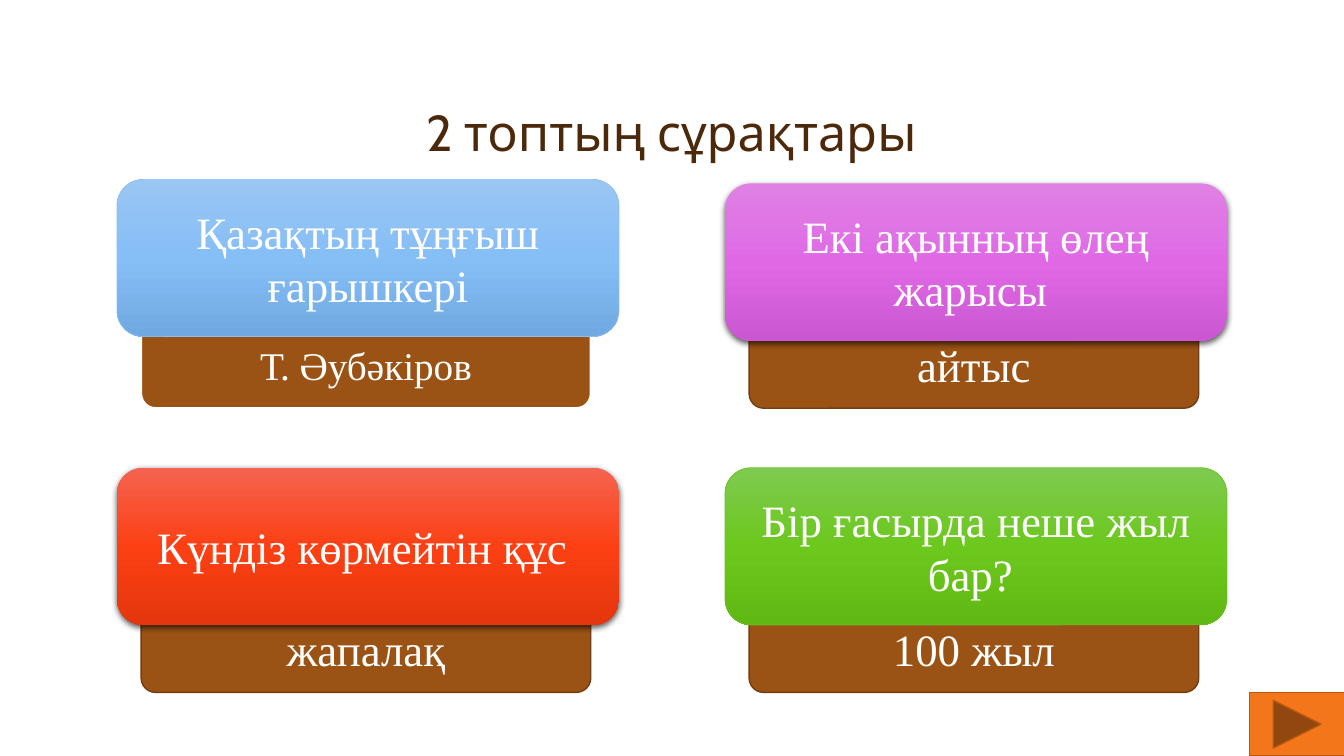
import copy

import pptx
import pptx.dml.color
import pptx.enum.shapes
import pptx.enum.text
import pptx.oxml
import pptx.oxml.ns
import pptx.util

PX = 9144  # EMU per px, 100 px to the inch
SHAPES = pptx.enum.shapes.MSO_SHAPE
ANCHORS = pptx.enum.text.MSO_ANCHOR
COLORS = {
    "title": "4D290B",
    "text": "FFFFFF",
    "answer": "9A5315",
    "answer_line": "723D10",
    "button": "F3771A",
    "button_line": "B45813",
    "blue_line": "8BBEF1",
    "green_line": "6DC025",
}
GRADIENTS = {
    "blue": ("9AC6F4", "86BEF6", "70A9E1"),
    "pink": ("DF81E4", "DF69E5", "CC57D2"),
    "red": ("F56350", "FC4014", "E5360D"),
    "green": ("7ECA50", "6CC81D", "60B813"),
}
# question, its left, top, gradient, line; answer, its size, line, line width
CARDS = [
    ("Қазақтың тұңғыш ғарышкері", 116, 178, "blue", "blue_line",
     "Т. Әубәкіров", 28, "text", 1.5),
    ("Екі ақынның өлең жарысы ", 719, 182, "pink", None,
     "айтыс", 32, "answer_line", 1),
    ("Күндіз көрмейтін құс ", 116, 464, "red", None,
     "жапалақ", 32, "answer_line", 1),
    ("Бір ғасырда неше жыл бар? ", 719, 464, "green", "green_line",
     "100 жыл", 32, "answer_line", 1),
]
ANSWER_TOPS = {178: 319, 182: 319, 464: 601}


def rgb(value):
    return pptx.dml.color.RGBColor.from_string(value)


def add_box(page, kind, left, top, width, height):
    box = page.shapes.add_shape(kind, left * PX, top * PX, width * PX, height * PX)
    box.shadow.inherit = False
    return box


def set_line(box, color, width):
    if color is None:
        box.line.fill.background()
        return
    box.line.color.rgb = rgb(COLORS[color])
    box.line.width = pptx.util.Pt(width)


def fill_solid(box, color):
    box.fill.solid()
    box.fill.fore_color.rgb = rgb(COLORS[color])


def fill_gradient(box, colors):
    """Fill from top to bottom with evenly spaced colours."""
    box.fill.gradient()
    box.fill.gradient_angle = 270
    stop_list = box.element.spPr.find(".//" + pptx.oxml.ns.qn("a:gsLst"))
    stop_list.append(copy.deepcopy(stop_list[-1]))
    for index, (stop, color) in enumerate(zip(box.fill.gradient_stops, colors)):
        stop.position = index / (len(colors) - 1)
        stop.color.rgb = rgb(color)


def add_shadow(box):
    effects = box.element.spPr.find(pptx.oxml.ns.qn("a:effectLst"))
    effects.append(pptx.oxml.parse_xml(
        f'<a:outerShdw {pptx.oxml.ns.nsdecls("a")} blurRad="57150" dist="19050" '
        'dir="5400000" algn="ctr" rotWithShape="0"><a:srgbClr val="000000">'
        '<a:alpha val="63000"/></a:srgbClr></a:outerShdw>'))


def write(box, text, size, font, color, anchor):
    frame = box.text_frame
    frame.word_wrap = True
    frame.vertical_anchor = anchor
    para = frame.paragraphs[0]
    para.text = text
    para.alignment = pptx.enum.text.PP_ALIGN.CENTER
    para.font.size = pptx.util.Pt(size)
    para.font.name = font
    para.font.color.rgb = rgb(COLORS[color])
    return para


def add_title(page, text):
    title = page.shapes.title
    title.left, title.top, title.width, title.height = (
        116 * PX, 33 * PX, 1100 * PX, 133 * PX)
    para = write(title, text, 36, "Cabin", "title", ANCHORS.BOTTOM)
    para.line_spacing = 0.9


def add_answer(page, text, left, top, size, line, line_width):
    box = add_box(page, SHAPES.ROUNDED_RECTANGLE, left, top, 446, 86)
    fill_solid(box, "answer")
    set_line(box, line, line_width)
    write(box, text, size, "Times New Roman", "text", ANCHORS.MIDDLE)


def add_question(page, text, left, top, gradient, line):
    box = add_box(page, SHAPES.ROUNDED_RECTANGLE, left, top, 498, 156)
    fill_gradient(box, GRADIENTS[gradient])
    set_line(box, line, 0.5)
    if line is None:
        add_shadow(box)
    write(box, text, 32, "Times New Roman", "text", ANCHORS.MIDDLE)


def add_next_button(page):
    button = add_box(page, SHAPES.ACTION_BUTTON_FORWARD_OR_NEXT, 1239, 687, 95, 63)
    fill_solid(button, "button")
    set_line(button, "button_line", 1)


def main():
    deck = pptx.Presentation()
    deck.slide_width = pptx.util.Inches(13.33)
    deck.slide_height = pptx.util.Inches(7.5)
    page = deck.slides.add_slide(deck.slide_layouts.get_by_name("Title Only"))
    add_title(page, "2 топтың сұрақтары")
    for question, left, top, gradient, line, answer, size, edge, width in CARDS:
        add_answer(page, answer, left + 24, ANSWER_TOPS[top], size, edge, width)
        add_question(page, question, left, top, gradient, line)
    add_next_button(page)
    deck.save("out.pptx")


if __name__ == "__main__":
    main()
